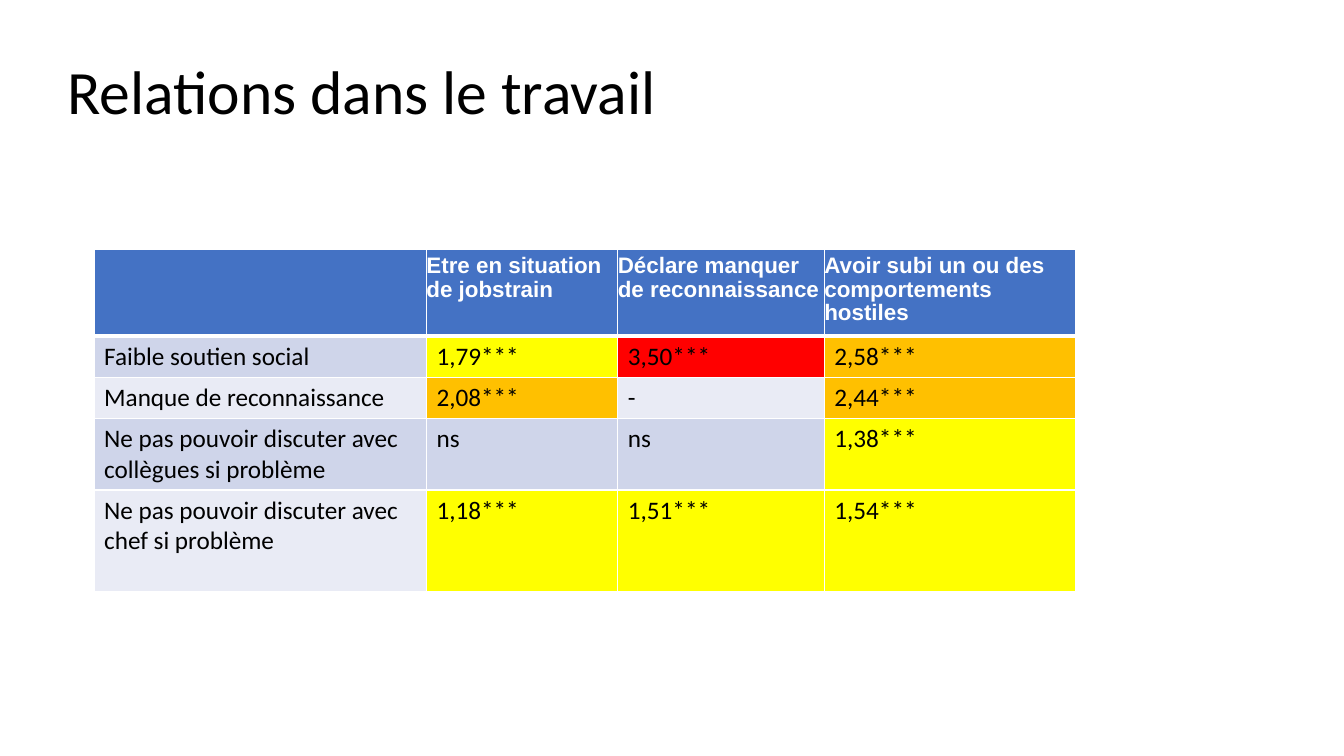
from dataclasses import dataclass

from lxml.etree import SubElement
from pptx import Presentation
from pptx.dml.color import RGBColor as RGB
from pptx.enum.text import MSO_ANCHOR as Anchor, MSO_AUTO_SIZE as AutoSize, PP_ALIGN as Align
from pptx.oxml.ns import qn
from pptx.util import Emu, Inches, Pt


@dataclass(frozen=True)
class Theme:
    body_font: str = "Calibri"
    head_font: str = "Arial"
    title_size: int = 44
    body_size: int = 18
    head_size: int = 16
    text: str = "000000"
    white: str = "FFFFFF"
    header: str = "4472C4"
    bands: tuple = ("CFD5EA", "E9EBF5")
    weak: str = "FFFF00"
    medium: str = "FFC000"
    strong: str = "FF0000"


THEME = Theme()
SLIDE_W, SLIDE_H = Inches(13.33), Inches(7.5)
TITLE_BOX = (0.05, 0.08, 0.9, 0.09)
TABLE_BOX = (0.07, 0.33, 0.73, 0.45)
COLUMN_INCHES = (3.3, 1.9, 2.05, 2.49)
ROW_INCHES = (0.84, 0.41, 0.41, 0.71, 1.01)

TITLE = "Relations dans le travail"
HEADERS = ("", "Etre en situation de jobstrain", "Déclare manquer de reconnaissance",
           "Avoir subi un ou des comportements hostiles")
ODDS_RATIOS = (
    ("Faible soutien social", "1,79***", "3,50***", "2,58***"),
    ("Manque de reconnaissance", "2,08***", "-", "2,44***"),
    ("Ne pas pouvoir discuter avec collègues si problème", "ns", "ns", "1,38***"),
    ("Ne pas pouvoir discuter avec chef si problème", "1,18***", "1,51***", "1,54***"),
)


def place(box):
    """Turn shares of the slide into left, top, width and height."""
    return [Emu(round(share * side)) for share, side in zip(box, (SLIDE_W, SLIDE_H) * 2)]


def write(tf, text, size=THEME.body_size, font=THEME.body_font, color=THEME.text,
          bold=False, spacing=1.0):
    p = tf.paragraphs[0]
    p.alignment, p.line_spacing = Align.LEFT, spacing
    p.font.size = Pt(size)
    if text:
        r = p.add_run()
        r.text = text
        r.font.name, r.font.size, r.font.bold = font, Pt(size), bold
        r.font.color.rgb = RGB.from_string(color)


def add_title(s, box):
    sp = s.shapes.title
    sp.left, sp.top, sp.width, sp.height = place(box)
    tf = sp.text_frame
    tf.margin_left = tf.margin_top = tf.margin_right = tf.margin_bottom = 0
    tf.word_wrap, tf.auto_size = True, AutoSize.SHAPE_TO_FIT_TEXT
    tf.vertical_anchor = Anchor.MIDDLE
    write(tf, TITLE, size=THEME.title_size, spacing=0.9)


def set_borders(cell, **widths):
    """Draw white borders; the keywords L, R, T and B give widths in points."""
    tc_pr = cell._tc.get_or_add_tcPr()
    for position, (side, width) in enumerate(widths.items()):
        ln = SubElement(tc_pr, qn(f"a:ln{side}"), w=str(int(Pt(width))))
        SubElement(SubElement(ln, qn("a:solidFill")), qn("a:srgbClr"), val=THEME.white)
        tc_pr.insert(position, ln)


def risk_color(text, band):
    """Colour a significant odds ratio by its size, anything else by its band."""
    if not text.endswith("***"):
        return band
    ratio = float(text.rstrip("*").replace(",", "."))
    return THEME.strong if ratio >= 3 else THEME.medium if ratio >= 2 else THEME.weak


def fill_cell(cell, text, fill, **text_format):
    cell.fill.solid()
    cell.fill.fore_color.rgb = RGB.from_string(fill)
    cell.vertical_anchor = Anchor.TOP
    write(cell.text_frame, text, **text_format)


def add_risk_table(s, box):
    left, top, width, height = place(box)
    rows = (HEADERS, *ODDS_RATIOS)
    table = s.shapes.add_table(len(rows), len(HEADERS), left, top, width, height).table
    for column, share in zip(table.columns, COLUMN_INCHES):
        column.width = Emu(round(width * share / sum(COLUMN_INCHES)))
    for row, share in zip(table.rows, ROW_INCHES):
        row.height = Emu(round(height * share / sum(ROW_INCHES)))

    for i, texts in enumerate(rows):
        for j, text in enumerate(texts):
            cell = table.cell(i, j)
            if i == 0:
                cell.margin_left = cell.margin_right = 0
                fill_cell(cell, text, THEME.header, size=THEME.head_size, bold=True,
                          font=THEME.head_font, color=THEME.white, spacing=0.95)
            else:
                fill_cell(cell, text, risk_color(text, THEME.bands[(i - 1) % 2]))
            set_borders(cell, L=1, R=1, T=3 if i == 1 else 1, B=3 if i == 0 else 1)


def main():
    prs = Presentation()
    prs.slide_width, prs.slide_height = SLIDE_W, SLIDE_H
    s = prs.slides.add_slide(prs.slide_layouts[5])
    add_title(s, TITLE_BOX)
    add_risk_table(s, TABLE_BOX)
    prs.save("out.pptx")


if __name__ == "__main__":
    main()
